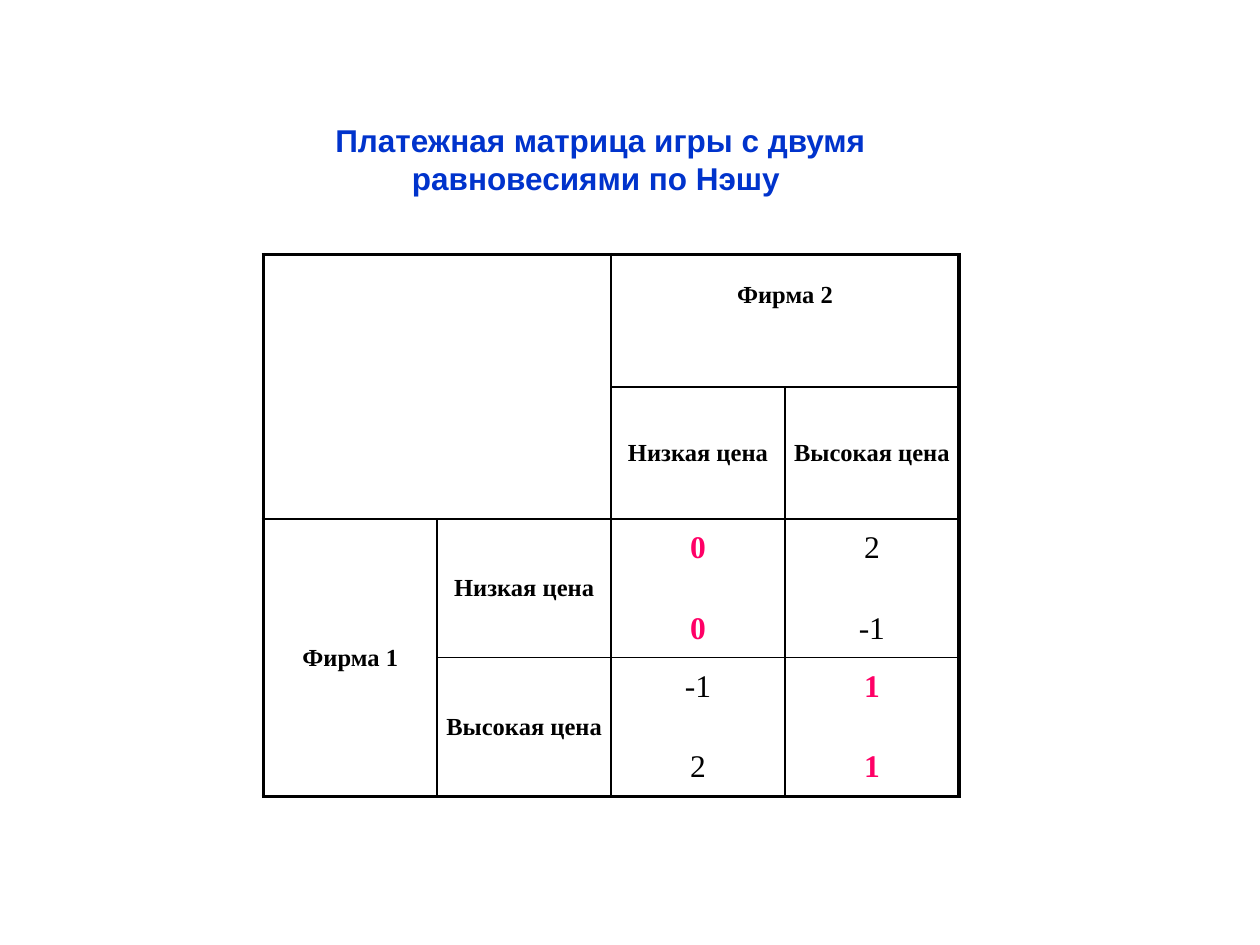
from dataclasses import dataclass

from lxml.etree import SubElement
from pptx import Presentation
from pptx.dml.color import RGBColor
from pptx.enum.text import MSO_ANCHOR, MSO_AUTO_SIZE, PP_ALIGN
from pptx.oxml.ns import qn
from pptx.slide import Slide
from pptx.table import Table, _Cell
from pptx.util import Inches, Pt

BLUE = RGBColor(0x00, 0x33, 0xCC)
PINK = RGBColor(0xFF, 0x00, 0x66)
BLACK = RGBColor(0x00, 0x00, 0x00)
NO_STYLE = "{2D5ABB26-0587-4C30-8999-92F81FD0307C}"
COLS = [1.38] * 4
ROWS = [1.05, 1.05, 1.1, 1.1]
THIN, THICK = 1, 2.25


@dataclass(frozen=True)
class Entry:
    row: int
    col: int
    lines: tuple[str, ...]
    size: int = 14
    bold: bool = True
    color: RGBColor = BLACK
    foot: float = 0.02


HEADS = [
    Entry(0, 2, ("Фирма 2",), foot=0.43),
    Entry(1, 2, ("Низкая цена",)),
    Entry(1, 3, ("Высокая цена",)),
    Entry(2, 0, ("Фирма 1",)),
    Entry(2, 1, ("Низкая цена",)),
    Entry(3, 1, ("Высокая цена",)),
]
PAYOFFS = [
    Entry(2, 2, ("0", "0"), 18, True, PINK),
    Entry(2, 3, ("2", "-1"), 18, False),
    Entry(3, 2, ("-1", "2"), 18, False),
    Entry(3, 3, ("1", "1"), 18, True, PINK),
]


def add_title(slide: Slide, text: str) -> None:
    title = slide.shapes.title
    title.left, title.top = Inches(2.09), Inches(0.91)
    title.width, title.height = Inches(5.35), Inches(0.7)
    frame = title.text_frame
    frame.text = text
    frame.word_wrap = True
    frame.auto_size = MSO_AUTO_SIZE.NONE
    frame.vertical_anchor = MSO_ANCHOR.TOP
    para = frame.paragraphs[0]
    para.alignment = PP_ALIGN.CENTER
    font = para.font
    font.name, font.size, font.bold = "Arial", Pt(18), True
    font.color.rgb = BLUE


def add_border(cell: _Cell, row: int, col: int) -> None:
    outer = {
        "L": col == 0,
        "R": col + cell.span_width == len(COLS),
        "T": row == 0,
        "B": row + cell.span_height == len(ROWS),
    }
    props = cell._tc.get_or_add_tcPr()
    for side, edge in outer.items():
        line = SubElement(props, qn(f"a:ln{side}"), w=str(Pt(THICK if edge else THIN)))
        fill = SubElement(line, qn("a:solidFill"))
        SubElement(fill, qn("a:srgbClr"), val=str(BLACK))


def fill_cell(table: Table, entry: Entry) -> None:
    cell = table.cell(entry.row, entry.col)
    cell.vertical_anchor = MSO_ANCHOR.MIDDLE
    cell.margin_left = cell.margin_right = cell.margin_top = Inches(0.02)
    cell.margin_bottom = Inches(entry.foot)
    frame = cell.text_frame
    frame.text = "\n".join(entry.lines)
    for index, para in enumerate(frame.paragraphs):
        para.alignment = PP_ALIGN.CENTER
        para.space_before = Pt(26 if index else 0)
        font = para.font
        font.name, font.size = "Times New Roman", Pt(entry.size)
        font.bold = entry.bold
        font.color.rgb = entry.color


def add_matrix(slide: Slide) -> None:
    frame = slide.shapes.add_table(
        len(ROWS), len(COLS), Inches(2.09), Inches(2.02),
        Inches(sum(COLS)), Inches(sum(ROWS)),
    )
    table = frame.table
    table.first_row = table.horz_banding = False
    table._tbl.tblPr[0].text = NO_STYLE
    for col, width in zip(table.columns, COLS):
        col.width = Inches(width)
    for row, height in zip(table.rows, ROWS):
        row.height = Inches(height)
    for start, end in [((0, 0), (1, 1)), ((0, 2), (0, 3)), ((2, 0), (3, 0))]:
        table.cell(*start).merge(table.cell(*end))
    for row in range(len(ROWS)):
        for col in range(len(COLS)):
            cell = table.cell(row, col)
            if not cell.is_spanned:
                add_border(cell, row, col)
            cell.fill.background()
    for entry in HEADS + PAYOFFS:
        fill_cell(table, entry)


def main() -> None:
    deck = Presentation()
    deck.slide_width, deck.slide_height = Inches(10), Inches(7.5)
    slide = deck.slides.add_slide(deck.slide_layouts[5])
    add_title(slide, "Платежная матрица игры с двумя равновесиями по Нэшу ")
    add_matrix(slide)
    deck.save("out.pptx")


if __name__ == "__main__":
    main()
